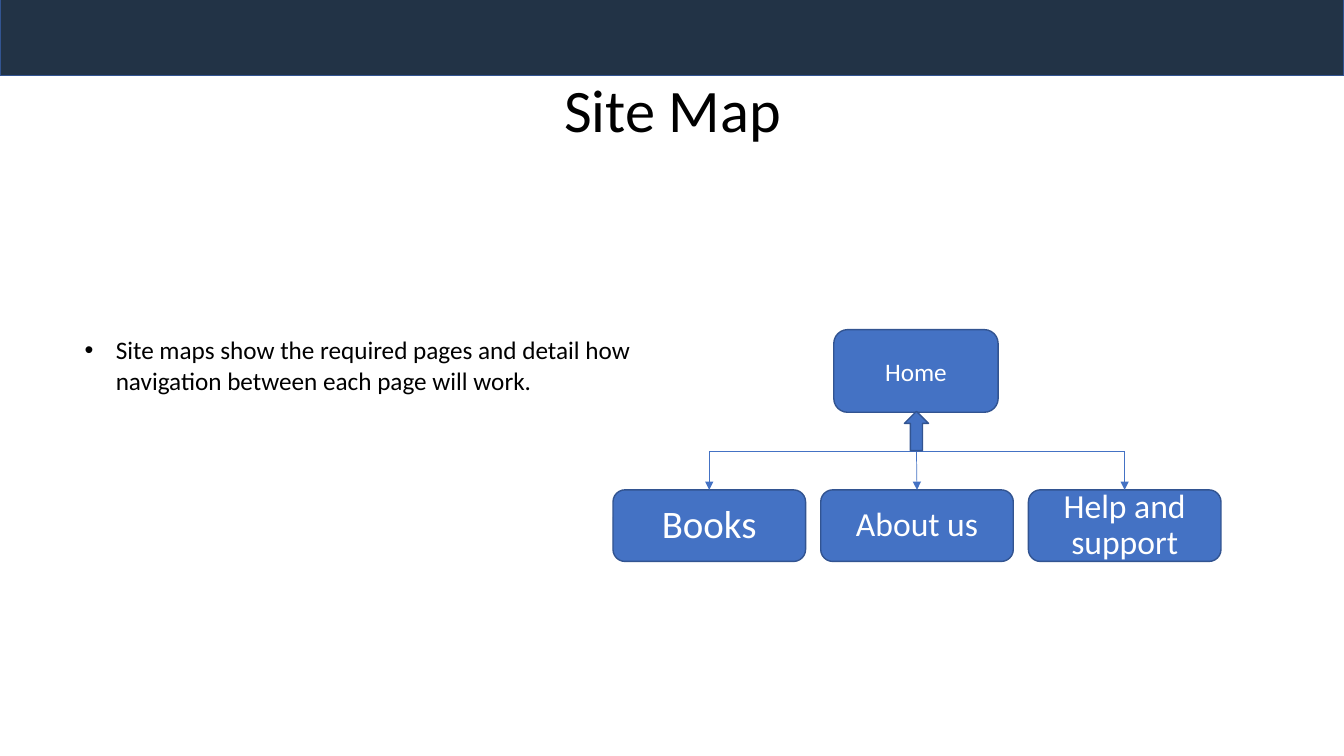
import pptx
import pptx.dml.color
import pptx.enum.shapes
import pptx.enum.text
import pptx.oxml
import pptx.oxml.ns
import pptx.util
from pptx.util import Inches

SHAPE = pptx.enum.shapes.MSO_SHAPE
ALIGN = pptx.enum.text.PP_ALIGN
ANCHOR = pptx.enum.text.MSO_ANCHOR


def rgb(value):
    return pptx.dml.color.RGBColor.from_string(value)


def add_xml(parent, tag, **attributes):
    """Append an empty DrawingML element to parent."""
    child = pptx.oxml.parse_xml(f'<a:{tag} {pptx.oxml.ns.nsdecls("a")}/>')
    for name, value in attributes.items():
        child.set(name, str(value))
    parent.append(child)


class SiteMapSlide:
    FONT = "Calibri"
    BLUE, EDGE, NAVY = "4472C4", "325491", "223346"
    BLACK, WHITE = "000000", "FFFFFF"

    def __init__(self, prs):
        self.s = prs.slides.add_slide(prs.slide_layouts[5])

    def add_text(self, p, text, size, color):
        r = p.add_run()
        r.text = text
        r.font.name = self.FONT
        r.font.size = pptx.util.Pt(size)
        r.font.color.rgb = rgb(color)

    def title(self, text, x, y, w, h, size):
        sp = self.s.shapes.title
        sp.left, sp.top, sp.width, sp.height = map(Inches, (x, y, w, h))
        tf = sp.text_frame
        tf.vertical_anchor = ANCHOR.MIDDLE
        p = tf.paragraphs[0]
        p.alignment = ALIGN.CENTER
        p.line_spacing = 0.9
        self.add_text(p, text, size, self.BLACK)

    def shape(self, kind, x, y, w, h, fill=BLUE):
        sp = self.s.shapes.add_shape(kind, *map(Inches, (x, y, w, h)))
        sp.shadow.inherit = False
        sp.fill.solid()
        sp.fill.fore_color.rgb = rgb(fill)
        sp.line.color.rgb = rgb(self.EDGE)
        sp.line.width = pptx.util.Pt(1)
        return sp

    def banner(self, x, y, w, h):
        sp = self.shape(SHAPE.RECTANGLE, x, y, w, h, self.NAVY)
        self.s.shapes.title.element.addprevious(sp.element)

    def page(self, text, x, y, w, h, size, spacing=0.9):
        sp = self.shape(SHAPE.ROUNDED_RECTANGLE, x, y, w, h)
        tf = sp.text_frame
        tf.word_wrap = True
        tf.vertical_anchor = ANCHOR.MIDDLE
        p = tf.paragraphs[0]
        p.alignment = ALIGN.CENTER
        p.line_spacing = spacing
        self.add_text(p, text, size, self.WHITE)
        return sp

    def line(self, x1, y1, x2, y2, start=None, end=None, arrow=False):
        """Draw a thin line, joined to the bottom of start and the top of end."""
        c = self.s.shapes.add_connector(
            pptx.enum.shapes.MSO_CONNECTOR.STRAIGHT,
            *map(Inches, (x1, y1, x2, y2)))
        if start is not None:
            c.begin_connect(start, 2)
        if end is not None:
            c.end_connect(end, 0)
        c.line.color.rgb = rgb(self.BLUE)
        c.line.width = pptx.util.Pt(0.5)
        spPr = c.element.spPr
        if arrow:
            add_xml(spPr.find(pptx.oxml.ns.qn("a:ln")), "tailEnd", type="triangle")
        add_xml(spPr, "effectLst")

    def bullet(self, text, x, y, w, h, size):
        tf = self.s.shapes.add_textbox(*map(Inches, (x, y, w, h))).text_frame
        tf.word_wrap = True
        tf.auto_size = pptx.enum.text.MSO_AUTO_SIZE.SHAPE_TO_FIT_TEXT
        p = tf.paragraphs[0]
        pPr = p._p.get_or_add_pPr()
        pPr.set("marL", str(Inches(0.31)))
        pPr.set("indent", str(Inches(-0.31)))
        add_xml(pPr, "buFont", typeface="Arial")
        add_xml(pPr, "buChar", char="•")
        self.add_text(p, text, size, self.BLACK)


def main():
    prs = pptx.Presentation()
    prs.slide_width, prs.slide_height = Inches(13.33), Inches(7.5)
    slide = SiteMapSlide(prs)
    slide.banner(0, -0.03, 13.33, 0.78)
    slide.title("Site Map", 0.92, 0.4, 11.5, 1.45, 43.1)

    left, top, width, height, pitch = 6.08, 4.86, 1.91, 0.71, 2.06
    center, branch_y = 9.09, 4.48
    home = slide.page("Home", 8.27, 3.27, 1.63, 0.82, 18, 1.0)
    pages = [("Books", 27.8), ("About us", 24), ("Help and support", 24)]
    for i, (name, size) in enumerate(pages):
        x = left + i * pitch
        page = slide.page(name, x, top, width, height, size)
        middle = x + width / 2
        if i == 1:
            slide.line(center, 4.09, middle, top, home, page, arrow=True)
        else:
            slide.line(center, branch_y, middle, branch_y)
            slide.line(middle, branch_y, middle, top, end=page, arrow=True)

    slide.shape(SHAPE.UP_ARROW, 8.97, 4.08, 0.24, 0.39)
    slide.bullet("Site maps show the required pages and detail how "
                 "navigation between each page will work.",
                 0.74, 3.27, 6.28, 0.71, 18)
    prs.save("out.pptx")


if __name__ == "__main__":
    main()
